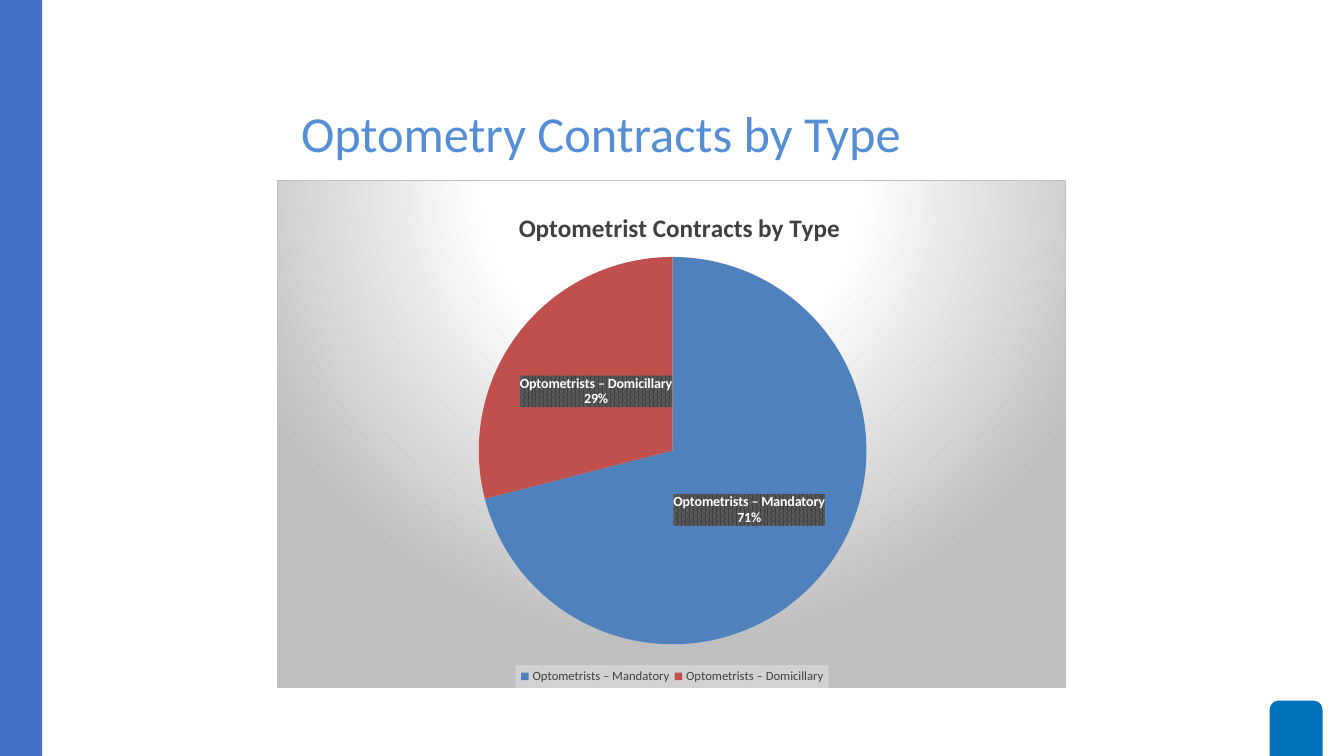
from lxml import etree
from pptx import Presentation
from pptx.chart.data import CategoryChartData
from pptx.dml.color import RGBColor
from pptx.enum.chart import XL_CHART_TYPE as ChartType
from pptx.enum.chart import XL_LABEL_POSITION as LabelPosition
from pptx.enum.chart import XL_LEGEND_POSITION as LegendPosition
from pptx.enum.shapes import MSO_SHAPE as Shape
from pptx.oxml import parse_xml
from pptx.oxml.ns import nsdecls, qn
from pptx.util import Pt

FONT = "Calibri"
BAR_BLUE = RGBColor(0x44, 0x71, 0xC4)
TAB_BLUE = RGBColor(0x00, 0x71, 0xBB)
TITLE_BLUE = RGBColor(0x55, 0x8E, 0xD5)
DARK_GREY = RGBColor(0x40, 0x40, 0x40)
BLACK = RGBColor(0x00, 0x00, 0x00)
WHITE = RGBColor(0xFF, 0xFF, 0xFF)

CONTRACTS = {
    "Optometrists – Mandatory": (71, RGBColor(0x4F, 0x81, 0xBD)),
    "Optometrists – Domicillary": (29, RGBColor(0xC0, 0x50, 0x4D)),
}

PANEL_FILL = """<a:gradFill><a:gsLst>
<a:gs pos="0"><a:srgbClr val="FFFFFF"/></a:gs>
<a:gs pos="39000"><a:srgbClr val="FFFFFF"/></a:gs>
<a:gs pos="100000"><a:srgbClr val="BFBFBF"/></a:gs></a:gsLst>
<a:path path="circle"><a:fillToRect l="50000" t="-80000" r="50000" b="180000"/></a:path>
</a:gradFill>
<a:ln w="9525"><a:solidFill><a:srgbClr val="BFBFBF"/></a:solidFill></a:ln>"""
LABEL_FILL = """<a:pattFill prst="pct75"><a:fgClr><a:srgbClr val="404040"/></a:fgClr>
<a:bgClr><a:srgbClr val="595959"/></a:bgClr></a:pattFill>"""
LEGEND_FILL = """<a:solidFill><a:srgbClr val="F2F2F2"><a:alpha val="39000"/></a:srgbClr></a:solidFill>"""


def set_font(font, size, color, bold=False):
    font.name, font.size, font.bold = FONT, Pt(size), bold
    font.color.rgb = color


def set_background(element, fill):
    """Give a chart part, whose font is already set, its fill."""
    properties = parse_xml(f"<c:spPr {nsdecls('c', 'a')}>{fill}</c:spPr>")
    element.find(qn("c:txPr")).addprevious(properties)


def set_layout(element, index, **fractions):
    """Place a chart part by fractions of the chart's size."""
    for old in element.findall(qn("c:layout")):
        element.remove(old)
    layout = parse_xml(f"<c:layout {nsdecls('c')}><c:manualLayout/></c:layout>")
    settings = {"xMode": "edge", "yMode": "edge", **fractions}
    if element.tag == qn("c:plotArea"):
        settings = {"layoutTarget": "inner", **settings}
    for name, value in settings.items():
        etree.SubElement(layout[0], qn(f"c:{name}")).set("val", str(value))
    element.insert(index, layout)


def add_block(slide, kind, left, top, width, height, color):
    shape = slide.shapes.add_shape(kind, Pt(left), Pt(top), Pt(width), Pt(height))
    shape.shadow.inherit = False
    shape.fill.solid()
    shape.fill.fore_color.rgb = color
    shape.line.fill.background()
    return shape


def add_frame(slide, width, height):
    # Corner tab and side bar
    tab_width, tab_height = 37.8, 39.6
    tab = add_block(slide, Shape.ROUND_2_SAME_RECTANGLE, width - 15.3 - tab_width,
                    height - tab_height, tab_width, tab_height, TAB_BLUE)
    tab.adjustments[0] = 0.17
    add_block(slide, Shape.RECTANGLE, 0, 0, 30.2, height, BAR_BLUE)


def add_title(slide, left, top, width, height):
    box = slide.shapes.add_textbox(Pt(left), Pt(top), Pt(width), Pt(height))
    frame = box.text_frame
    frame.word_wrap = True
    frame.margin_top = Pt(6.5)
    run = frame.paragraphs[0].add_run()
    run.text = "Optometry Contracts by Type"
    set_font(run.font, 36, TITLE_BLUE)


def add_contracts_chart(slide, left, top, width, height):
    data = CategoryChartData()
    data.categories = list(CONTRACTS)
    data.add_series("Series 1", [value for value, _ in CONTRACTS.values()])
    chart = slide.shapes.add_chart(ChartType.PIE, Pt(left), Pt(top), Pt(width),
                                   Pt(height), data).chart
    set_font(chart.font, 10, BLACK)
    chart_space = chart.element
    set_background(chart_space, PANEL_FILL)

    # Chart title
    chart.has_title = True
    run = chart.chart_title.text_frame.paragraphs[0].add_run()
    run.text = "Optometrist Contracts by Type"
    set_font(run.font, 18, DARK_GREY, bold=True)
    set_layout(chart_space.find(".//" + qn("c:title")), 1, x=0.3, y=0.05)

    # Slices
    plot = chart.plots[0]
    plot.vary_by_categories = True
    series = plot.series[0]
    for index, (_, color) in enumerate(CONTRACTS.values()):
        fill = series.points[index].format.fill
        fill.solid()
        fill.fore_color.rgb = color
    set_layout(chart_space.find(".//" + qn("c:plotArea")), 0,
               x=0.255, y=0.15, w=0.492, h=0.764)

    # Slice labels
    labels = series.data_labels
    labels.show_category_name = labels.show_percentage = True
    labels.show_value = False
    labels.position = LabelPosition.CENTER
    set_font(labels.font, 10, WHITE, bold=True)
    label_element = chart_space.find(".//" + qn("c:ser")).find(qn("c:dLbls"))
    set_background(label_element, LABEL_FILL)
    separator = parse_xml(f"<c:separator {nsdecls('c')}>\n</c:separator>")
    label_element.find(qn("c:showBubbleSize")).addnext(separator)

    # Legend
    chart.has_legend = True
    legend = chart.legend
    legend.position = LegendPosition.BOTTOM
    legend.include_in_layout = False
    set_font(legend.font, 9, DARK_GREY)
    legend_element = chart_space.find(".//" + qn("c:legend"))
    set_background(legend_element, LEGEND_FILL)
    set_layout(legend_element, 1, x=0.302, y=0.955, w=0.397, h=0.045)


def main():
    width, height = 960, 540
    presentation = Presentation()
    presentation.slide_width, presentation.slide_height = Pt(width), Pt(height)
    slide = presentation.slides.add_slide(presentation.slide_layouts[6])
    add_frame(slide, width, height)
    add_title(slide, 208, 66.2, 544, 28.8)
    add_contracts_chart(slide, 198, 128.9, 563.8, 362.9)
    presentation.save("out.pptx")


if __name__ == "__main__":
    main()
